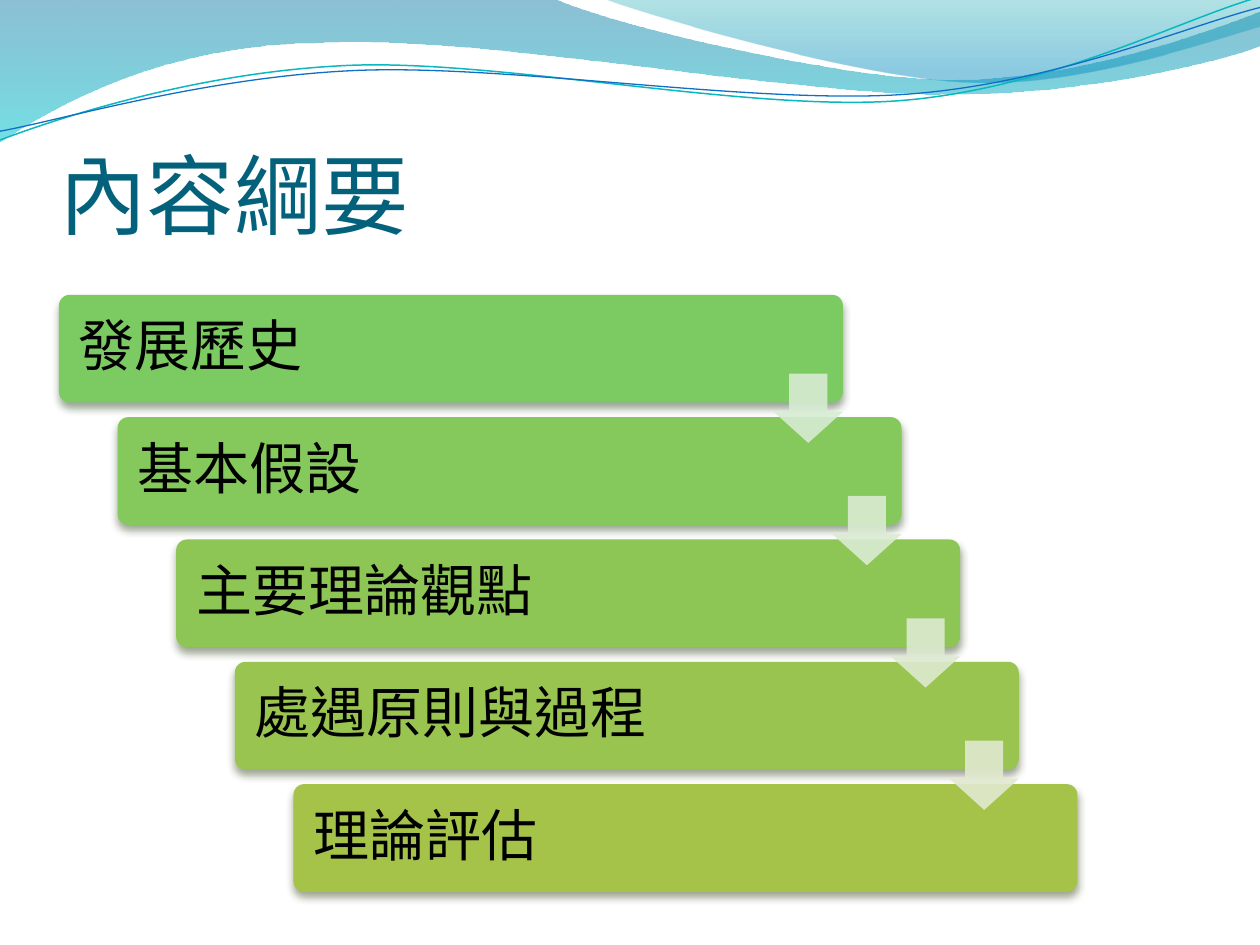
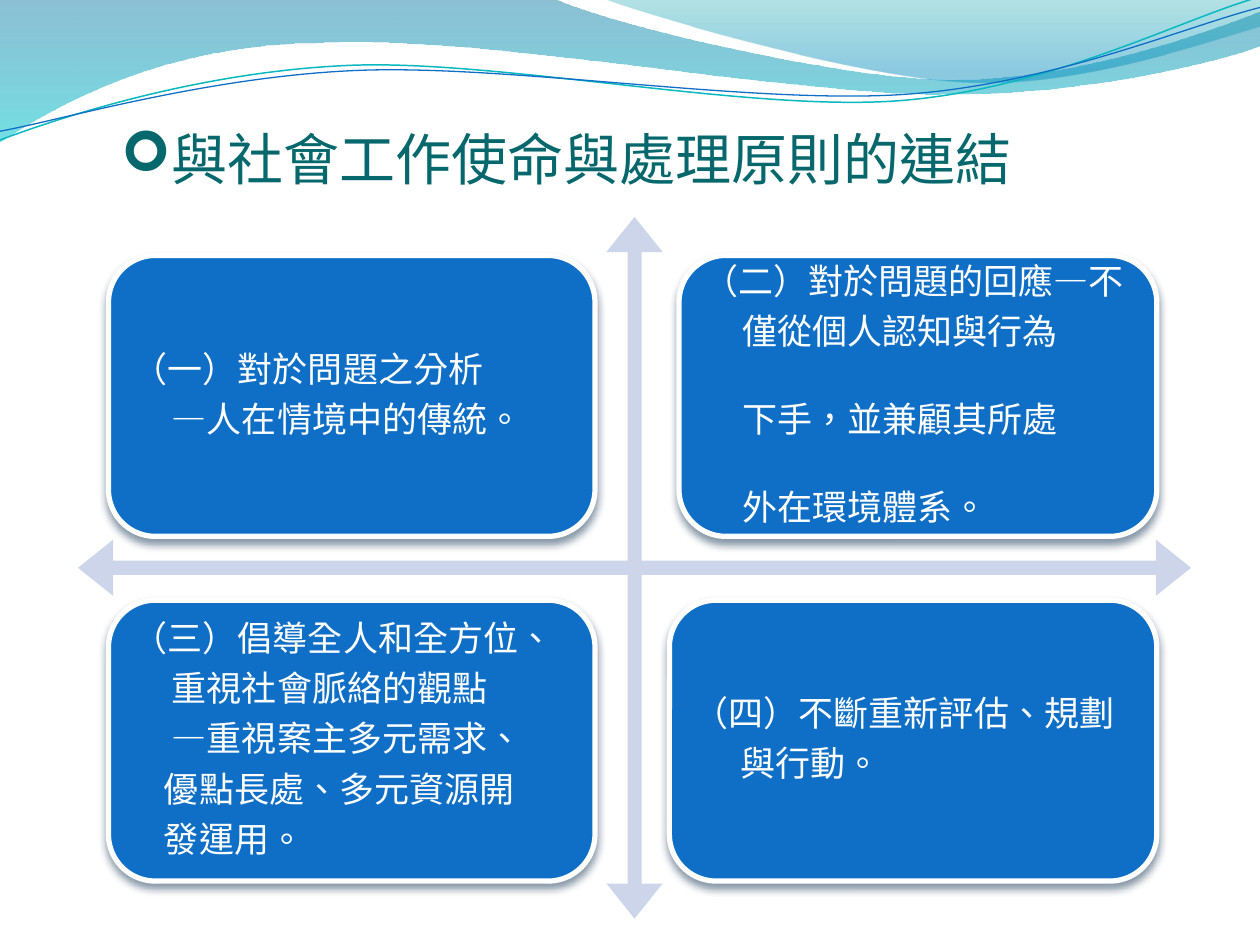
from pptx import Presentation
from pptx.dml.color import RGBColor
from pptx.enum.shapes import MSO_SHAPE as Shape
from pptx.enum.text import MSO_ANCHOR as Anchor, MSO_AUTO_SIZE as AutoSize, PP_ALIGN as Align
from pptx.oxml.ns import qn
from pptx.oxml.xmlchemy import OxmlElement as new_element
from pptx.util import Pt

# Content
OUTLINE_TITLE = "內容綱要"
OUTLINE_STEPS = [  # text, bar colour, shadow colour, colour of the arrow to the next bar
    ("發展歷史", "7CCA62", "2B4821", "D7ECD3"),
    ("基本假設", "85C85C", "2E471F", "DAEBD2"),
    ("主要理論觀點", "8EC656", "32461D", "DDEAD0"),
    ("處遇原則與過程", "99C44F", "36461B", "E1E9CF"),
    ("理論評估", "A5C249", "3A4519", None),
]
LINKS_TITLE = "與社會工作使命與處理原則的連結"
TIGHT, WIDE = 7, 28.7  # space before a line
LINKS_BOXES = [  # frame, then lines of text, indent, space before
    ((62, 146, 278, 160.5), [
        ("（一）對於問題之分析", 0, 0),
        ("—人在情境中的傳統。", 22.4, TIGHT)]),
    ((388, 146, 273, 160.5), [
        ("（二）對於問題的回應—不", 0, 0),
        ("僅從個人認知與行為", 22.4, TIGHT),
        ("下手，並兼顧其所處", 22.4, WIDE),
        ("外在環境體系。", 22.4, WIDE)]),
    ((62, 343, 278, 160.5), [
        ("（三）倡導全人和全方位、", 0, 0),
        ("重視社會脈絡的觀點", 22.4, TIGHT),
        ("—重視案主多元需求、", 22.4, TIGHT),
        ("優點長處、多元資源開", 17.9, TIGHT),
        ("發運用。", 17.9, TIGHT)]),
    ((382.5, 343, 278.5, 160.5), [
        ("（四）不斷重新評估、規劃", 0, 0),
        ("與行動。", 26.9, TIGHT)]),
]

# Header waves: a start point, then segments (2 numbers: line, 6 numbers: curve)
WAVE_FILLS = [  # start, segments, gradient stops (position, colour, opacity)
    ((0, -0.7), [(316.8, -0.7), (342.7, 12.2, 478, 45.4, 545.8, 45.4),
                 (614.2, 45.4, 689.8, 18.7, 720, 6.5), (720.7, 26),
                 (707.8, 31.7, 626.4, 54.7, 537, 54),
                 (447.8, 54, 275, 20.2, 185, 24.5), (93, 25.2, 33, 59.8, -0.7, 81.4)],
     [(0, "0074A1", 45), (1, "00C6CF", 55)]),
    ((344.9, -0.7), [(366.5, 7.9, 491, 44.6, 553.7, 46.8),
                     (616.3, 49.7, 692, 23, 720, 15), (720, 0)],
     [(0, "00A1A9", 30), (0.8, "008BBF", 45)]),
]
WAVE_LINES = [  # start, segments, colour, width
    ((0, 80), [(34.6, 67, 113.8, 41, 199.4, 37.4), (284.4, 33.8, 427, 64, 513.4, 57.6),
               (599.8, 51, 675.4, 10.8, 718.6, -1.4)], "0AB8BF", 0.85),
    ((0, 75), [(33.8, 69, 118, 43.9, 203.8, 40.3), (290.2, 36.7, 429.8, 59.8, 516.2, 54),
               (602, 48.2, 677.5, 15, 720, 4.3)], "0F6FC6", 0.75),
]

CJK_FONT = "Noto Sans CJK SC"
BLACK, WHITE, BLUE, PALE_BLUE = "000000", "FFFFFF", "0F6FC6", "CCD5EA"


def rgb(value):
    return RGBColor.from_string(value)


def set_opacity(colour_element, percent):
    alpha = new_element("a:alpha")
    alpha.set("val", str(percent * 1000))
    colour_element.append(alpha)


def add_block(slide, kind, frame, colour, adjustments=(), shadow=None, opacity=None):
    """Add a filled preset shape, with a soft shadow if a shadow colour is given."""
    shape = slide.shapes.add_shape(kind, *map(Pt, frame))
    for index, value in enumerate(adjustments):
        shape.adjustments[index] = value
    shape.fill.solid()
    shape.fill.fore_color.rgb = rgb(colour)
    shape.line.fill.background()
    shape.shadow.inherit = False
    properties = shape._element.spPr
    if opacity:
        set_opacity(properties.find(".//" + qn("a:srgbClr")), opacity)
    if shadow:
        outer = new_element("a:outerShdw")
        for name, value in (("blurRad", Pt(4.5)), ("dist", Pt(3)), ("dir", 90 * 60000)):
            outer.set(name, str(int(value)))
        outer.set("rotWithShape", "0")
        shadow_colour = new_element("a:srgbClr")
        shadow_colour.set("val", shadow)
        set_opacity(shadow_colour, 48)
        outer.append(shadow_colour)
        properties.find(qn("a:effectLst")).append(outer)
    return shape


def add_text(paragraph, text, size, colour, font=CJK_FONT):
    paragraph.alignment = Align.LEFT
    run = paragraph.add_run()
    run.text = text
    run.font.name, run.font.size = font, Pt(size)
    run.font.color.rgb = rgb(colour)
    properties = run.font._element
    properties.set("lang", "zh-TW")
    east_asian = new_element("a:ea")
    east_asian.set("typeface", CJK_FONT)
    properties.find(qn("a:latin")).addnext(east_asian)


def set_frame(text_frame, anchor, horizontal, vertical):
    text_frame.word_wrap = True
    text_frame.auto_size = AutoSize.NONE
    text_frame.vertical_anchor = anchor
    text_frame.margin_left = text_frame.margin_right = Pt(horizontal)
    text_frame.margin_top = text_frame.margin_bottom = Pt(vertical)


def set_indent(paragraph, left, first=0):
    properties = paragraph._p.get_or_add_pPr()
    properties.set("marL", str(Pt(left)))
    properties.set("indent", str(Pt(first)))
    return properties


def fill_lines(shape, lines, size, colour, margin):
    text_frame = shape.text_frame
    set_frame(text_frame, Anchor.MIDDLE, margin, margin)
    for index, (text, indent, space) in enumerate(lines):
        paragraph = text_frame.add_paragraph() if index else text_frame.paragraphs[0]
        set_indent(paragraph, indent)
        paragraph.line_spacing = 0.9
        if space:
            paragraph.space_before = Pt(space)
        add_text(paragraph, text, size, colour)


def set_title(slide, frame, text, size, colour, font, anchor, margins, bullet=None):
    title = slide.shapes.title
    title.left, title.top, title.width, title.height = map(Pt, frame)
    set_frame(title.text_frame, anchor, *margins)
    paragraph = title.text_frame.paragraphs[0]
    if bullet:
        properties = set_indent(paragraph, 26.3, -26.3)
        for tag, name, value in (("a:buFont", "typeface", "Wingdings"),
                                 ("a:buChar", "char", bullet)):
            element = new_element(tag)
            element.set(name, value)
            properties.append(element)
    add_text(paragraph, text, size, colour, font)


def add_wave(slide, start, segments, close):
    """Draw through all the points, then join each curve's three points into a Bezier."""
    points = [tuple(map(Pt, segment[index:index + 2]))
              for segment in segments for index in range(0, len(segment), 2)]
    builder = slide.shapes.build_freeform(*map(Pt, start))
    builder.add_line_segments(points, close=close)
    shape = builder.convert_to_shape()
    shape.shadow.inherit = False
    steps = iter(list(shape._element.spPr.iter(qn("a:lnTo"))))
    for segment in segments:
        first = next(steps)
        if len(segment) == 6:
            curve = new_element("a:cubicBezTo")
            first.addprevious(curve)
            for step in (first, next(steps), next(steps)):
                curve.append(step[0])
                step.getparent().remove(step)
    return shape


def add_header(slide):
    """Draw the waves and move them to the master, behind its placeholders."""
    waves = []
    for start, segments, stops in WAVE_FILLS:
        wave = add_wave(slide, start, segments, True)
        wave.line.fill.background()
        wave.fill.gradient()
        wave.fill.gradient_angle = 270
        for stop, (position, colour, _) in zip(wave.fill.gradient_stops, stops):
            stop.position = position
            stop.color.rgb = rgb(colour)
        colours = list(wave._element.spPr.iter(qn("a:srgbClr")))
        for element, (_, _, opacity) in zip(colours, stops):
            set_opacity(element, opacity)
        waves.append(wave)
    for start, segments, colour, width in WAVE_LINES:
        wave = add_wave(slide, start, segments, False)
        wave.fill.background()
        wave.line.color.rgb = rgb(colour)
        wave.line.width = Pt(width)
        waves.append(wave)
    master_tree = slide.slide_layout.slide_master.shapes._spTree
    for index, wave in enumerate(waves):
        master_tree.insert(2 + index, wave._element)


def build_outline(slide):
    set_title(slide, (34, 50.5, 648, 90), OUTLINE_TITLE, 50, "04617B", "Calibri",
              Anchor.BOTTOM, (0, 0))
    left, top, width, height = 33.7, 168.5, 448, 61.5
    step_x, step_y, arrow = 33.5, 69.9, 39.6
    for index, (text, colour, shadow, _) in enumerate(OUTLINE_STEPS):
        frame = (left + index * step_x, top + index * step_y, width, height)
        bar = add_block(slide, Shape.ROUNDED_RECTANGLE, frame, colour, [0.1], shadow)
        fill_lines(bar, [(text, 0, 0)], 32, BLACK, 9.6)
    # Arrows sit at the right end of each bar, over the next one
    for index, (*_, colour) in enumerate(OUTLINE_STEPS[:-1]):
        frame = (left + width - arrow + index * step_x, top + 45 + index * step_y, arrow, arrow)
        add_block(slide, Shape.DOWN_ARROW, frame, colour, [0.55, 0.45], opacity=90)


def build_links(slide):
    set_title(slide, (62, 67.5, 540, 46), LINKS_TITLE, 32, "06686C", "Karla",
              Anchor.MIDDLE, (7.2, 3.6), bullet="➢")
    add_block(slide, Shape.QUAD_ARROW, (44.6, 124, 636, 401), PALE_BLUE, [0.02, 0.04, 0.05])
    for frame, lines in LINKS_BOXES:
        box = add_block(slide, Shape.ROUNDED_RECTANGLE, frame, BLUE, shadow="042747")
        box.line.color.rgb = rgb(WHITE)
        box.line.width = Pt(3)
        fill_lines(box, lines, 20, WHITE, 6)


def main():
    presentation = Presentation()
    presentation.slide_width, presentation.slide_height = Pt(720), Pt(540)
    layout = presentation.slide_layouts[5]  # title only
    outline, links = [presentation.slides.add_slide(layout) for _ in range(2)]
    add_header(outline)
    build_outline(outline)
    build_links(links)
    presentation.save("out.pptx")


if __name__ == "__main__":
    main()
